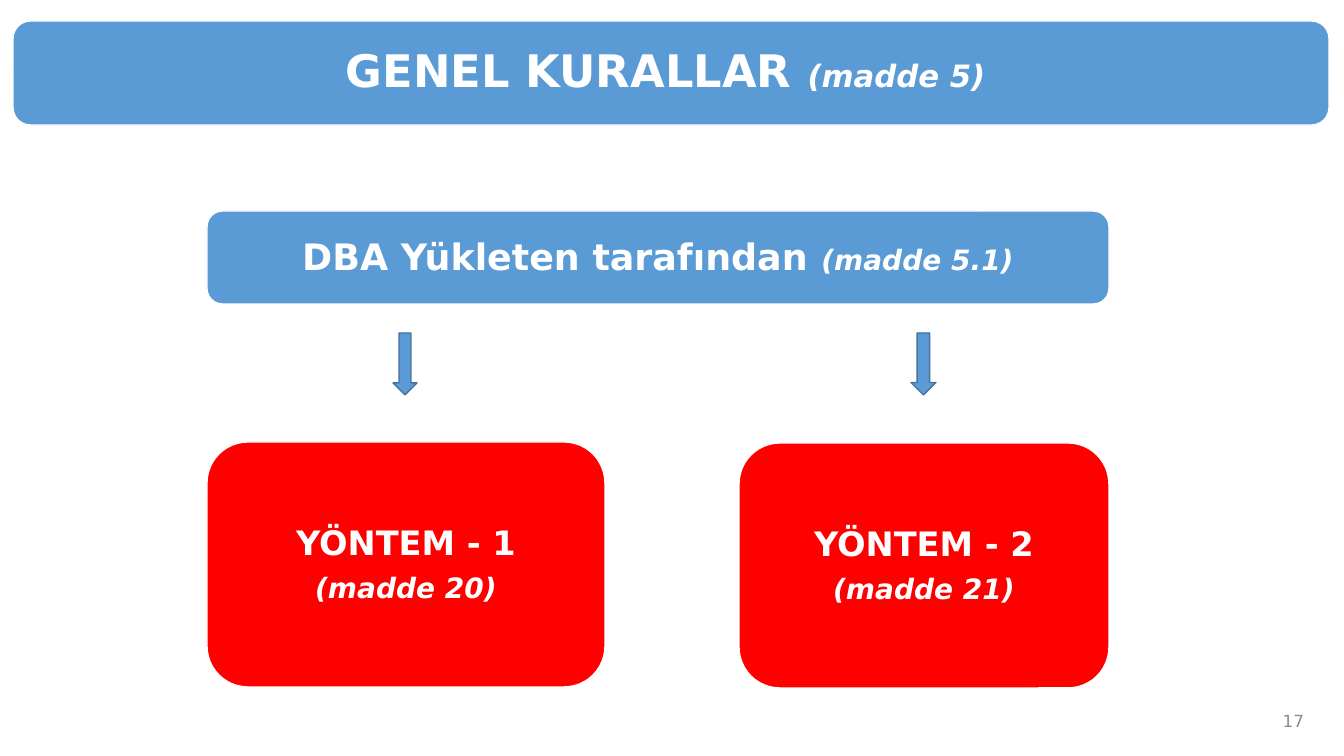
from pptx import Presentation
from pptx.dml.color import RGBColor
from pptx.enum.shapes import MSO_SHAPE
from pptx.enum.text import MSO_ANCHOR, PP_ALIGN
from pptx.util import Emu, Pt

ROUND, ARROW = MSO_SHAPE.ROUNDED_RECTANGLE, MSO_SHAPE.DOWN_ARROW
MIDDLE = MSO_ANCHOR.MIDDLE
CENTER, RIGHT = PP_ALIGN.CENTER, PP_ALIGN.RIGHT
FONT = "DejaVu Sans"
COLORS = {"blue": "5B9BD5", "edge": "43739E", "red": "FF0000",
          "white": "FFFFFF", "gray": "8C8C8C"}
SCALE = 914400 / 100.8  # EMU per px

# box (left, top, width, height), fill, line spacing, bottom inset,
# paragraphs of (text, size, italic) runs
CARDS = [
    ((13, 21, 1316, 104), "blue", 1.0, 14,
     [[("GENEL KURALLAR ", 32, False), ("(madde 5) ", 22, True)]]),
    ((207, 211, 902, 93), "blue", 0.9, 6,
     [[("DBA Yükleten tarafından ", 26, False), ("(madde 5.1)", 20, True)]]),
    ((207, 442, 398, 245), "red", 0.9, 6,
     [[("YÖNTEM - 1", 24, False)], [("(madde 20)", 20, True)]]),
    ((739, 443, 370, 245), "red", 0.9, 6,
     [[("YÖNTEM - 2", 24, False)], [("(madde 21)", 20, True)]]),
]
ARROWS = [(393, 333, 24, 62), (911, 333, 25, 62)]
NUMBER = ("17", (1012, 701, 302, 40))


def px(n):
    return Emu(round(n * SCALE))


def color(name):
    return RGBColor.from_string(COLORS[name])


def add_form(slide, kind, box, fill, line):
    form = slide.shapes.add_shape(kind, *map(px, box))
    form.shadow.inherit = False
    form.fill.solid()
    form.fill.fore_color.rgb = color(fill)
    form.line.color.rgb = color(line)
    form.line.width = Pt(1)
    return form


def style(para, tone, align):
    para.alignment = align
    para.font.name = FONT
    para.font.color.rgb = color(tone)


def add_card(slide, box, fill, spacing, bottom, paras):
    frame = add_form(slide, ROUND, box, fill, "white").text_frame
    frame.word_wrap = True
    frame.vertical_anchor = MIDDLE
    frame.margin_left = frame.margin_right = px(8)
    frame.margin_top, frame.margin_bottom = px(8), px(bottom)
    for i, runs in enumerate(paras):
        para = frame.add_paragraph() if i else frame.paragraphs[0]
        style(para, "white", CENTER)
        para.font.bold = True
        para.line_spacing = spacing
        if i:
            para.space_before = Pt(8.4)
        for text, size, italic in runs:
            run = para.add_run()
            run.text = text
            run.font.size = Pt(size)
            run.font.italic = italic


def add_number(slide, text, box):
    frame = slide.shapes.add_textbox(*map(px, box)).text_frame
    frame.word_wrap = True
    frame.vertical_anchor = MIDDLE
    para = frame.paragraphs[0]
    para.text = text
    style(para, "gray", RIGHT)
    para.font.size = Pt(12)


def main():
    deck = Presentation()
    deck.slide_width, deck.slide_height = px(1344), px(756)
    slide = deck.slides.add_slide(deck.slide_layouts[6])
    for card in CARDS:
        add_card(slide, *card)
    for box in ARROWS:
        add_form(slide, ARROW, box, "blue", "edge")
    add_number(slide, *NUMBER)
    deck.save("out.pptx")


if __name__ == "__main__":
    main()
